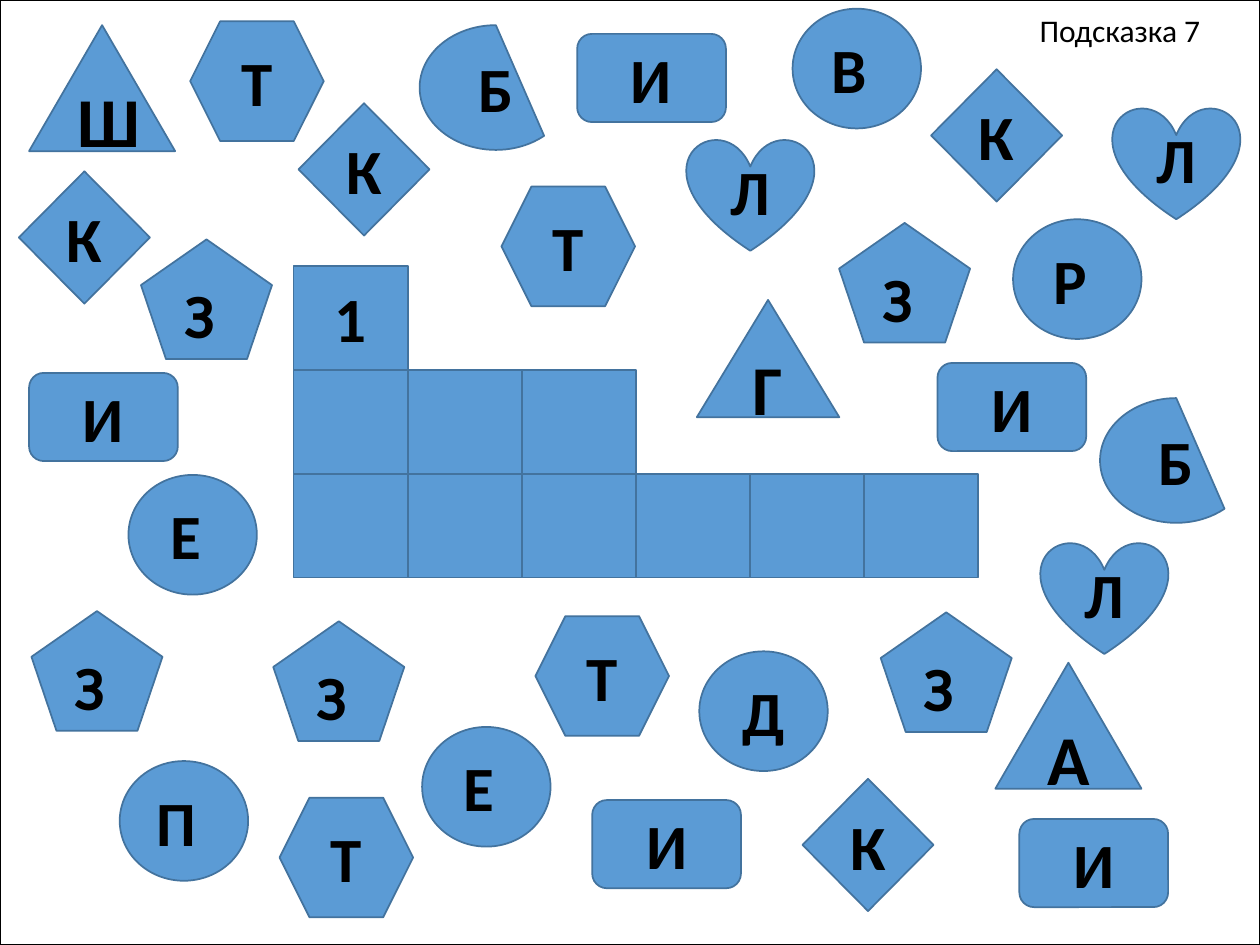
import pptx
import pptx.dml.color
import pptx.enum.shapes
import pptx.enum.text
import pptx.util

Pt = pptx.util.Pt
SHAPES = pptx.enum.shapes.MSO_SHAPE
ALIGN = pptx.enum.text.PP_ALIGN
ANCHOR = pptx.enum.text.MSO_ANCHOR
AUTO_SIZE = pptx.enum.text.MSO_AUTO_SIZE

WIDTH, HEIGHT = 720, 540
BLUE, EDGE, BLACK, WHITE = "5B9BD5", "43739E", "000000", "FFFFFF"

# Preset, width, height, letter size, then (letter, left, top) of each piece
LETTER_GROUPS = [
    (SHAPES.ISOSCELES_TRIANGLE, 83.5, 72, 40,
     [("Ш", 16.6, 14.4), ("А ", 568.8, 378.7)]),
    (SHAPES.ISOSCELES_TRIANGLE, 81.4, 67, 40,
     [("Г", 398.2, 171.4)]),
    (SHAPES.OVAL, 73.4, 68.4, 36,
     [("В ", 452.9, 5), ("П ", 68.4, 434.9), ("Е ", 241.2, 415.4),
      ("Е ", 73.4, 271.4), ("Р ", 578.9, 125.3), ("Д", 399.6, 372.2)]),
    (SHAPES.CHORD, 87.1, 71.3, 36,
     [("Б", 628.6, 227.5), ("Б", 239.8, 14.4)]),
    (SHAPES.REGULAR_PENTAGON, 74.9, 68.4, 36,
     [("З ", 18, 349.2), ("З ", 156.2, 355), ("З ", 479.5, 127.4),
      ("З ", 503.3, 349.9), ("З ", 80.6, 136.8)]),
    (SHAPES.DIAMOND, 74.9, 75.6, 36,
     [("К", 532.1, 39.6), ("К", 170.6, 59), ("К", 10.8, 97.9),
      ("К", 458.6, 445)]),
    (SHAPES.HEXAGON, 76.3, 68.4, 36,
     [("Т", 108.7, 12.2), ("Т", 286.6, 106.6), ("Т", 159.8, 455.8),
      ("Т", 306, 352.1)]),
    (SHAPES.HEART, 72.7, 64.1, 36,
     [("Л", 594.7, 309.6), ("Л", 635.8, 61.2), ("Л", 392.4, 79.2)]),
    (SHAPES.ROUNDED_RECTANGLE, 85, 50.4, 36,
     [("И", 535.7, 207.4), ("И", 329.8, 19.4), ("И", 338.4, 457.2),
      ("И", 582.5, 468), ("И", 16.6, 213.1)]),
]


def color(hex_code):
    return pptx.dml.color.RGBColor.from_string(hex_code)


def set_font(paragraph, size, bold):
    paragraph.font.name = "Calibri"
    paragraph.font.size = Pt(size)
    paragraph.font.bold = bold
    paragraph.font.color.rgb = color(BLACK)


def add_piece(slide, preset, box, letter="", size=36, fill=BLUE, edge=EDGE):
    """Place one outlined shape with an optional bold letter."""
    piece = slide.shapes.add_shape(preset, *map(Pt, box))
    piece.shadow.inherit = False
    piece.fill.solid()
    piece.fill.fore_color.rgb = color(fill)
    piece.line.color.rgb = color(edge)
    piece.line.width = Pt(1)
    if letter:
        frame = piece.text_frame
        frame.vertical_anchor = ANCHOR.MIDDLE
        paragraph = frame.paragraphs[0]
        paragraph.text = letter
        paragraph.alignment = ALIGN.CENTER
        set_font(paragraph, size, True)
    return piece


def add_border(slide, box):
    border = add_piece(slide, SHAPES.RECTANGLE, box, fill=WHITE, edge=BLACK)
    slide.shapes.element.insert(2, border.element)  # behind the title


def place_title(slide, box, text):
    title = slide.shapes.title
    title.left, title.top, title.width, title.height = map(Pt, box)
    frame = title.text_frame
    frame.text = text
    frame.word_wrap = True
    frame.auto_size = AUTO_SIZE.SHAPE_TO_FIT_TEXT
    frame.vertical_anchor = ANCHOR.TOP
    paragraph = frame.paragraphs[0]
    paragraph.alignment = ALIGN.LEFT
    set_font(paragraph, 18, False)


def add_answer_grid(slide, box, row_lengths, clue):
    """Stack left-aligned rows of cells; the first cell holds the clue number."""
    left, top, width, height = box
    cell_width = width / max(row_lengths)
    cell_height = height / len(row_lengths)
    for row, length in enumerate(row_lengths):
        for column in range(length):
            cell = (left + column * cell_width, top + row * cell_height,
                    cell_width, cell_height)
            add_piece(slide, SHAPES.RECTANGLE, cell,
                      clue if row == column == 0 else "")


def scatter_letters(slide, groups):
    for preset, width, height, size, letters in groups:
        for letter, left, top in letters:
            add_piece(slide, preset, (left, top, width, height), letter, size)


def main():
    deck = pptx.Presentation()
    deck.slide_width, deck.slide_height = Pt(WIDTH), Pt(HEIGHT)
    slide = deck.slides.add_slide(deck.slide_layouts.get_by_name("Title Only"))
    add_border(slide, (0, 0, WIDTH, HEIGHT))
    place_title(slide, (586.8, 2.9, 131, 28.8), "Подсказка 7")
    add_answer_grid(slide, (167.8, 151.9, 391.2, 178.2), (1, 3, 6), "1")
    scatter_letters(slide, LETTER_GROUPS)
    deck.save("out.pptx")


if __name__ == "__main__":
    main()
